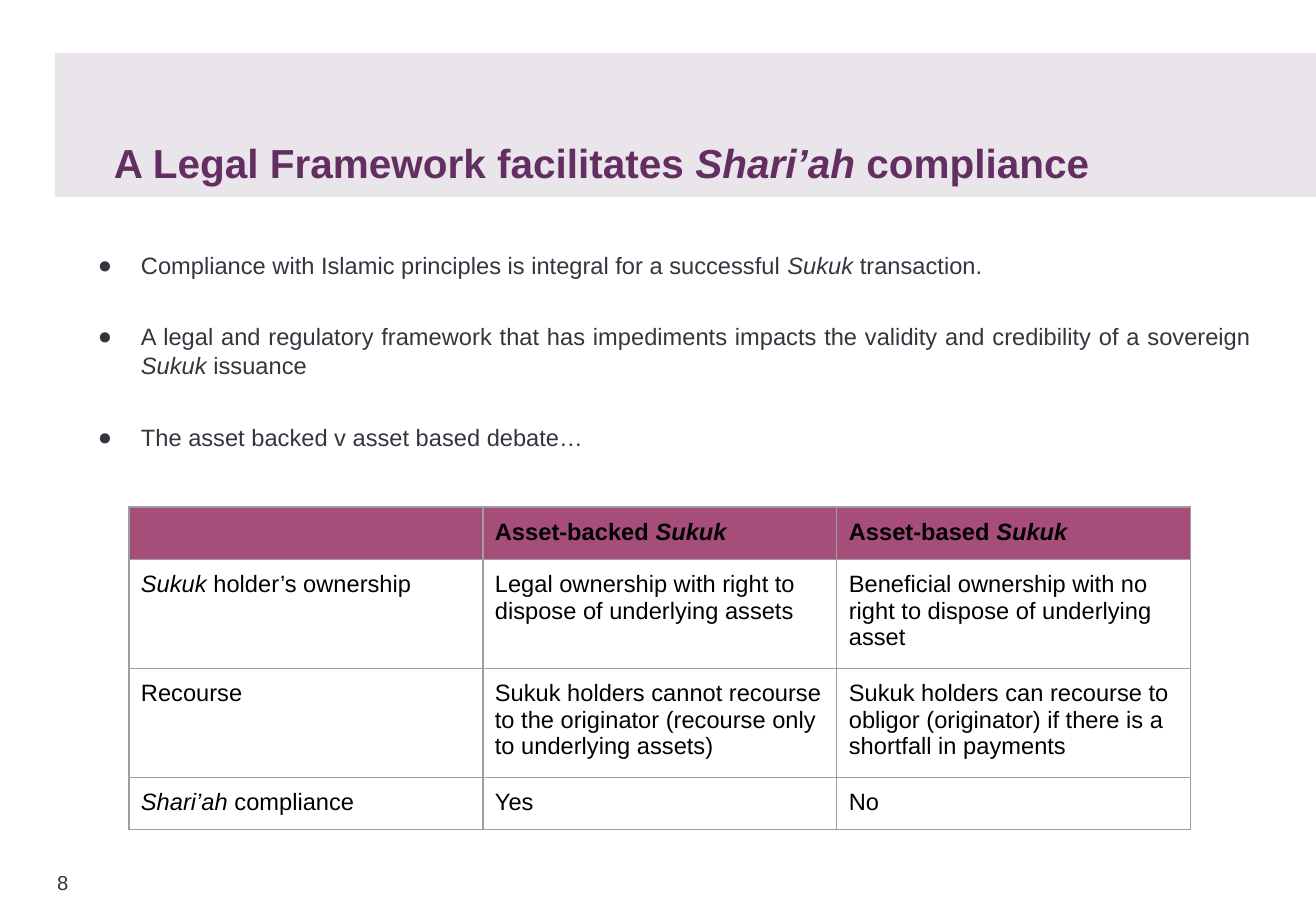
from lxml import etree
from pptx import Presentation, util as u
from pptx.dml.color import RGBColor
from pptx.enum import shapes, text
from pptx.oxml.ns import qn

TITLE = "A Legal Framework facilitates *Shari’ah* compliance"
POINTS = [
    "Compliance with Islamic principles is integral for a successful *Sukuk* transaction.",
    "A legal and regulatory framework that has impediments impacts the validity "
    "and credibility of a sovereign *Sukuk* issuance",
    "The asset backed v asset based debate…",
]
ROWS = [
    ("", "Asset-backed *Sukuk*", "Asset-based *Sukuk*"),
    ("*Sukuk* holder’s ownership",
     "Legal ownership with right to dispose of underlying assets",
     "Beneficial ownership with no right to dispose of underlying asset"),
    ("Recourse",
     "Sukuk holders cannot recourse to the originator (recourse only to underlying assets)",
     "Sukuk holders can recourse to obligor (originator) if there is a shortfall in payments"),
    ("*Shari’ah* compliance", "Yes", "No"),
]
PAGE = "8"
HIGH = [50, 104, 104, 51]
WIDE = 354
INSET = 12
FONT = "Arial"
HUE = {"band": "EAE5EB", "title": "632E62", "body": "32363F",
       "head": "A64D79", "cell": "000000", "line": "9E9E9E"}
SCALE = 7526


def px(n):
    return u.Emu(n * SCALE)


def rgb(name):
    return RGBColor.from_string(HUE[name])


def write(para, line, size, hue, bold=False):
    for i, part in enumerate(line.split("*")):
        if part:
            run = para.add_run()
            run.text = part
            font = run.font
            font.name, font.size, font.bold = FONT, u.Pt(size), bold
            font.italic = i % 2 == 1
            font.color.rgb = rgb(hue)


def box(slide, *area):
    frame = slide.shapes.add_textbox(*map(px, area)).text_frame
    frame.word_wrap = True
    frame.margin_left = frame.margin_right = 0
    frame.margin_top = frame.margin_bottom = 0
    return frame


def bullet(para):
    props = para._p.get_or_add_pPr()
    props.set("marL", str(px(61)))
    props.set("indent", str(px(-43)))
    tint = etree.SubElement(props, qn("a:buClr"))
    etree.SubElement(tint, qn("a:srgbClr"), val=HUE["body"])
    etree.SubElement(props, qn("a:buFont"), typeface=FONT)
    etree.SubElement(props, qn("a:buChar"), char="●")


def border(cell):
    props = cell._tc.get_or_add_tcPr()
    for side in "LRTB":
        line = etree.SubElement(props, qn("a:ln" + side), w=str(u.Pt(0.75)))
        fill = etree.SubElement(line, qn("a:solidFill"))
        etree.SubElement(fill, qn("a:srgbClr"), val=HUE["line"])


def grid(slide):
    cols = len(ROWS[0])
    table = slide.shapes.add_table(
        len(ROWS), cols, px(129), px(507), px(WIDE * cols), px(sum(HIGH))).table
    table.first_row = table.horz_banding = False
    for col in table.columns:
        col.width = px(WIDE)
    for r, row in enumerate(ROWS):
        table.rows[r].height = px(HIGH[r])
        for c, line in enumerate(row):
            cell = table.cell(r, c)
            cell.margin_left = cell.margin_right = px(INSET)
            cell.margin_top = cell.margin_bottom = px(INSET)
            border(cell)
            if r == 0:
                cell.fill.solid()
                cell.fill.fore_color.rgb = rgb("head")
            else:
                cell.fill.background()
            para = cell.text_frame.paragraphs[0]
            write(para, line, 14, "cell", r == 0)
            if not line:
                etree.SubElement(para._p, qn("a:endParaRPr"), sz="1400")


def main():
    deck = Presentation()
    deck.slide_width, deck.slide_height = px(1316), px(911)
    slide = deck.slides.add_slide(deck.slide_layouts[6])

    band = slide.shapes.add_shape(
        shapes.MSO_SHAPE.RECTANGLE, px(55), px(53), px(1261), px(144))
    band.shadow.inherit = False
    band.fill.solid()
    band.fill.fore_color.rgb = rgb("band")
    band.line.fill.background()

    write(box(slide, 57, 870, 47, 32).paragraphs[0], PAGE, 12, "body")

    body = box(slide, 80, 250, 1172, 200)
    for i, line in enumerate(POINTS):
        para = body.add_paragraph() if i else body.paragraphs[0]
        bullet(para)
        para.alignment = text.PP_ALIGN.JUSTIFY
        para.line_spacing = 1.03
        if i:
            para.space_before = u.Pt(25)
        write(para, line, 14, "body")

    title = box(slide, 114, 73, 1091, 114)
    title.vertical_anchor = text.MSO_ANCHOR.BOTTOM
    write(title.paragraphs[0], TITLE, 24, "title", True)

    grid(slide)
    deck.save("out.pptx")


if __name__ == "__main__":
    main()
